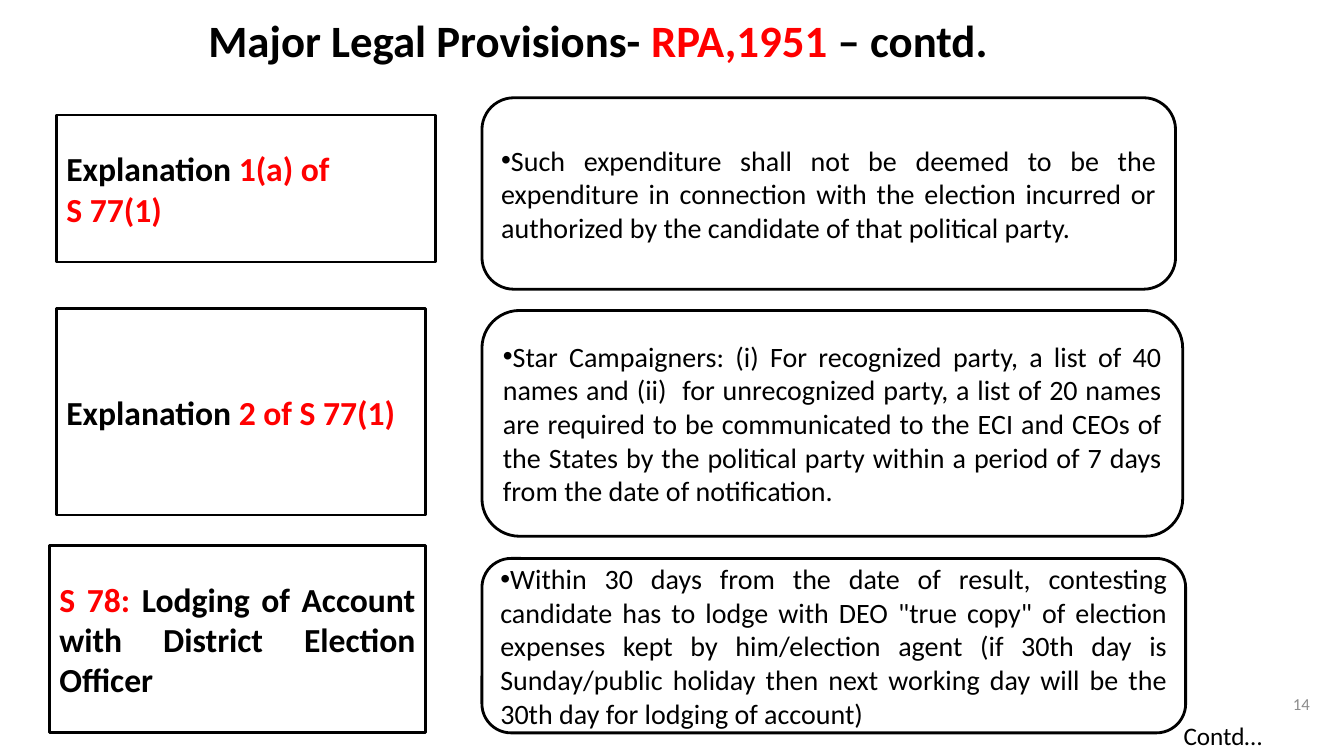
from dataclasses import dataclass

from lxml.etree import SubElement as Sub
from pptx import Presentation
from pptx.dml.color import RGBColor as Rgb
from pptx.enum.shapes import MSO_SHAPE as Kind
from pptx.enum.text import MSO_ANCHOR as Anchor, MSO_AUTO_SIZE as Fit, PP_ALIGN as Align
from pptx.oxml.ns import qn
from pptx.util import Inches, Pt

HUES = {"ink": "000000", "red": "FF0000", "gray": "8C8C8C", "paper": "FFFFFF"}
FONT = "Calibri"
WIDE, HIGH = Inches(13.33), Inches(7.5)


@dataclass
class Area:
    """Left, top, width and height as percent of the slide."""
    x: float
    y: float
    w: float
    h: float

    def place(self) -> tuple[int, int, int, int]:
        return (int(WIDE * self.x / 100), int(HIGH * self.y / 100),
                int(WIDE * self.w / 100), int(HIGH * self.h / 100))


@dataclass
class Span:
    text: str
    hue: str = "ink"


Lines = list[list[Span]]


@dataclass
class Row:
    head: Area
    label: Lines
    body: Area
    rule: str


def hue(name: str) -> Rgb:
    return Rgb.from_string(HUES[name])


def write(frame, lines: Lines, size: int, bold: bool = False,
          align: Align = Align.LEFT, anchor: Anchor = Anchor.MIDDLE) -> None:
    frame.word_wrap = True
    frame.vertical_anchor = anchor
    for i, spans in enumerate(lines):
        para = frame.paragraphs[0] if i == 0 else frame.add_paragraph()
        para.alignment = align
        for span in spans:
            run = para.add_run()
            run.text = span.text
            font = run.font
            font.name, font.size, font.bold = FONT, Pt(size), bold
            font.color.rgb = hue(span.hue)


def draw_box(slide, kind: Kind, area: Area):
    box = slide.shapes.add_shape(kind, *area.place())
    box.shadow.inherit = False
    box.fill.solid()
    box.fill.fore_color.rgb = hue("paper")
    box.line.color.rgb = hue("ink")
    box.line.width = Pt(2)
    return box


def add_dot(para) -> None:
    props = para._p.get_or_add_pPr()
    props.set("marL", "0")
    props.set("indent", "0")
    Sub(props, qn("a:buFont")).set("typeface", "Arial")
    Sub(props, qn("a:buChar")).set("char", "•")


def draw_row(slide, row: Row) -> None:
    head = draw_box(slide, Kind.RECTANGLE, row.head)
    write(head.text_frame, row.label, 24, True, Align.JUSTIFY)
    body = draw_box(slide, Kind.ROUNDED_RECTANGLE, row.body)
    write(body.text_frame, [[Span(row.rule)]], 20, align=Align.JUSTIFY)
    add_dot(body.text_frame.paragraphs[0])


ROWS = [
    Row(Area(4.2, 15.2, 28.21, 19.47),
        [[Span("Explanation "), Span("1(a) of ", "red")], [Span("S 77(1)", "red")]],
        Area(35.86, 12.93, 51.61, 25.33),
        "Such expenditure shall not be deemed to be the expenditure in connection "
        "with the election incurred or authorized by the candidate of that "
        "political party."),
    Row(Area(4.2, 40.8, 27.46, 27.33),
        [[Span("Explanation "), Span("2 of S 77(1)", "red")]],
        Area(35.86, 41.07, 52.14, 29.87),
        "Star Campaigners: (i) For recognized party, a list of 40 names and (ii)  "
        "for unrecognized party, a list of 20 names are required to be communicated "
        "to the ECI and CEOs of the States by the political party within a period "
        "of 7 days from the date of notification."),
    Row(Area(3.68, 72.13, 27.98, 24.8),
        [[Span("S 78: ", "red"),
          Span("Lodging of Account with District Election Officer")]],
        Area(35.86, 73.87, 52.36, 23.07),
        "Within 30 days from the date of result, contesting candidate has to lodge "
        "with DEO \"true copy\" of election expenses kept by him/election agent (if "
        "30th day is Sunday/public holiday then next working day will be the 30th "
        "day for lodging of account)"),
]


def main() -> None:
    deck = Presentation()
    deck.slide_width, deck.slide_height = WIDE, HIGH
    slide = deck.slides.add_slide(deck.slide_layouts[5])

    # Title
    title = slide.shapes.title
    title.left, title.top, title.width, title.height = Area(2.33, 0, 84.32, 10.53).place()
    write(title.text_frame,
          [[Span("Major Legal Provisions- "), Span("RPA,1951 ", "red"), Span("– contd.")]],
          32, True, Align.CENTER)
    title.text_frame.auto_size = Fit.NONE

    # Provisions and their rules
    for row in ROWS:
        draw_row(slide, row)

    # Page number and closing note
    page = slide.shapes.add_textbox(*Area(74.87, 90.4, 23.33, 5.33).place())
    write(page.text_frame, [[Span("14", "gray")]], 12, align=Align.RIGHT)
    note = slide.shapes.add_textbox(*Area(87.32, 94.67, 8.78, 5.33).place())
    write(note.text_frame, [[Span("Contd…")]], 18, anchor=Anchor.TOP)
    note.text_frame.auto_size = Fit.SHAPE_TO_FIT_TEXT

    deck.save("out.pptx")


if __name__ == "__main__":
    main()
